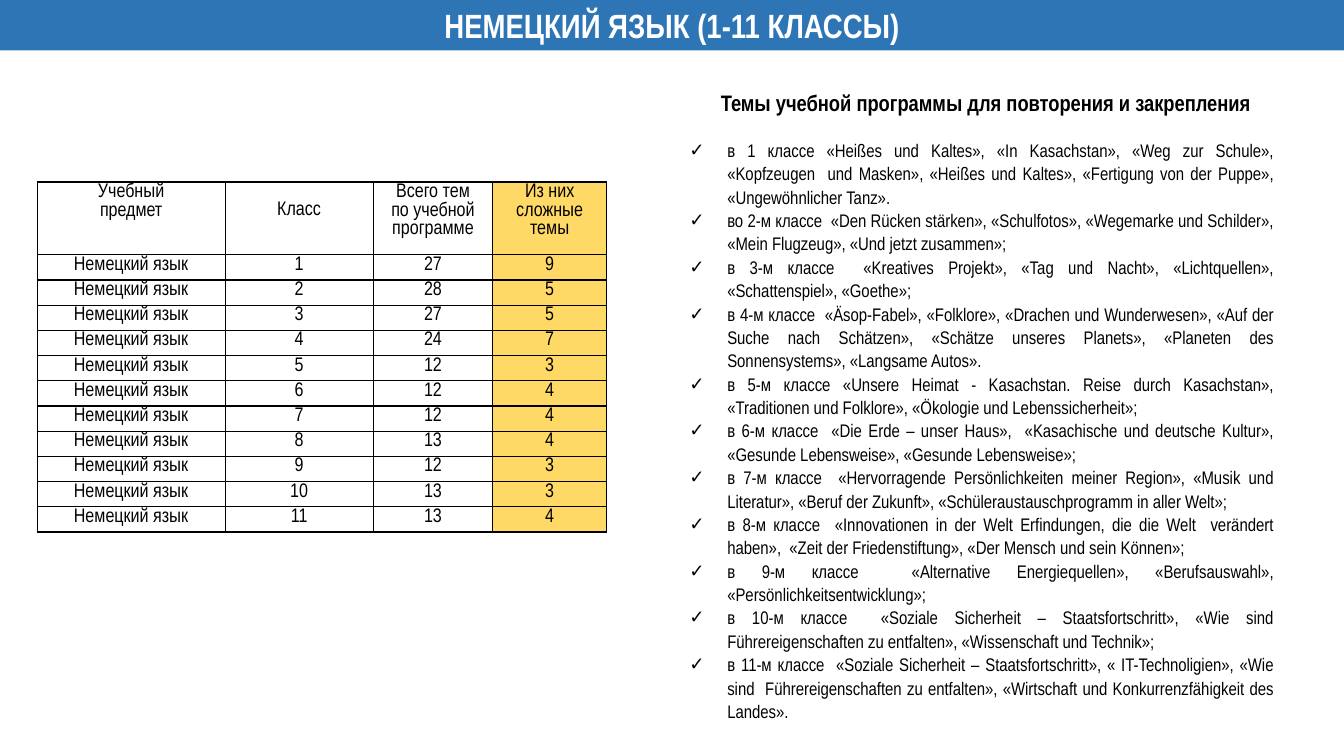
import dataclasses

import lxml.etree
import pptx
import pptx.dml.color
import pptx.enum.text
import pptx.oxml.ns
import pptx.util

Pt = pptx.util.Pt
RGB = pptx.dml.color.RGBColor
Align = pptx.enum.text.PP_ALIGN
Anchor = pptx.enum.text.MSO_ANCHOR
qn = pptx.oxml.ns.qn


@dataclasses.dataclass(frozen=True)
class Theme:
    """Hold the colours, typeface and type sizes of the slide."""
    font: str = "Arial Narrow"
    banner: str = "2E75B6"
    highlight: str = "FFD966"
    ink: str = "000000"
    light: str = "FFFFFF"
    title_size: float = 24
    heading_size: float = 16
    list_size: float = 13
    table_size: float = 14


THEME = Theme()
TITLE = "НЕМЕЦКИЙ ЯЗЫК (1-11 КЛАССЫ)"
HEADING = "Темы учебной программы для повторения и закрепления"
TOPICS = [
    "в 1 классе «Heißes und Kaltes», «In Kasachstan», «Weg zur Schule», «Kopfzeugen  und Masken», «Heißes und Kaltes», «Fertigung von der Puppe», «Ungewöhnlicher Tanz».",
    "во 2-м классе  «Den Rücken stärken», «Schulfotos», «Wegemarke und Schilder», «Mein Flugzeug», «Und jetzt zusammen»;",
    "в 3-м классе  «Kreatives Projekt», «Tag und Nacht», «Lichtquellen», «Schattenspiel», «Goethe»;",
    "в 4-м классе  «Äsop-Fabel», «Folklore», «Drachen und Wunderwesen», «Auf der Suche nach Sсhätzen», «Schätze unseres Planets», «Planeten des Sonnensystems», «Langsame Autos».",
    "в 5-м классе «Unsere Heimat - Kasachstan. Reise durch Kasachstan», «Traditionen und Folklore», «Ökologie und Lebenssicherheit»;",
    "в 6-м классе  «Die Erde – unser Haus»,  «Kasachische und deutsche Kultur», «Gesunde Lebensweise», «Gesunde Lebensweise»;",
    "в 7-м классе  «Hervorragende Persönlichkeiten meiner Region», «Musik und Literatur», «Beruf der Zukunft», «Schüleraustauschprogramm in aller Welt»;",
    "в 8-м классе  «Innovationen in der Welt Erfindungen, die die Welt  verändert haben»,  «Zeit der Friedenstiftung», «Der Mensch und sein Können»;",
    "в 9-м классе  «Alternative Energiequellen», «Berufsauswahl», «Persönlichkeitsentwicklung»;",
    "в 10-м классе  «Soziale Sicherheit – Staatsfortschritt», «Wie sind Führereigenschaften zu entfalten», «Wissenschaft und Technik»;",
    "в 11-м классе  «Soziale Sicherheit – Staatsfortschritt», « IT-Technoligien», «Wie sind  Führereigenschaften zu entfalten», «Wirtschaft und Konkurrenzfähigkeit des Landes».",
]
SUBJECT = "Немецкий язык"
HEADERS = ["Учебный\nпредмет", "Класс", "Всего тем\nпо учебной программе", "Из них\nсложные темы"]
HEADER_TOPS = [1, 14, 1, 1]
TOTALS = [27, 28, 27, 24, 12, 12, 12, 13, 12, 13, 13]
DIFFICULT = [9, 5, 5, 7, 3, 4, 4, 4, 3, 3, 4]


def apply_format(target, values):
    """Set every named attribute of the target."""
    for name, value in values.items():
        setattr(target, name, value)


def place(shape, box):
    """Move a shape to a box of left, top, width and height in points."""
    names = ("left", "top", "width", "height")
    apply_format(shape, {name: Pt(value) for name, value in zip(names, box)})


def write_paragraph(paragraph, text, size, color, bold=False, **layout):
    """Fill a paragraph with one formatted run."""
    run = paragraph.add_run()
    run.text = text
    apply_format(run.font, {"name": THEME.font, "size": Pt(size), "bold": bold})
    run.font.color.rgb = RGB.from_string(color)
    spacing = {"space_before": Pt(0), "space_after": Pt(0), "line_spacing": 1.0}
    apply_format(paragraph, {**spacing, **layout})


def set_bullet(paragraph, margin, indent, mark=None):
    """Set the indents of a paragraph and its bullet mark, if any."""
    properties = paragraph._p.get_or_add_pPr()
    properties.set("marL", str(Pt(margin)))
    properties.set("indent", str(Pt(indent)))
    if mark:
        lxml.etree.SubElement(properties, qn("a:buFont"), typeface="Arial")
        lxml.etree.SubElement(properties, qn("a:buChar"), char=mark)
    else:
        lxml.etree.SubElement(properties, qn("a:buNone"))


def set_borders(cell):
    """Draw a one-point line on the four sides of a cell."""
    properties = cell._tc.get_or_add_tcPr()
    for side in ("a:lnL", "a:lnR", "a:lnT", "a:lnB"):
        line = lxml.etree.SubElement(properties, qn(side), w=str(Pt(1)))
        fill = lxml.etree.SubElement(line, qn("a:solidFill"))
        lxml.etree.SubElement(fill, qn("a:srgbClr"), val=THEME.ink)


def add_banner(slide, box):
    """Turn the title placeholder into the banner."""
    title = slide.shapes.title
    place(title, box)
    title.fill.solid()
    title.fill.fore_color.rgb = RGB.from_string(THEME.banner)
    frame = title.text_frame
    apply_format(frame, {"auto_size": pptx.enum.text.MSO_AUTO_SIZE.NONE,
                         "word_wrap": True, "vertical_anchor": Anchor.MIDDLE})
    write_paragraph(frame.paragraphs[0], TITLE, THEME.title_size, THEME.light,
                    bold=True, alignment=Align.CENTER)


def add_topics(slide, box):
    """Fill the body placeholder with the heading and the topic list."""
    body = slide.placeholders[1]
    place(body, box)
    frame = body.text_frame
    apply_format(frame, {"auto_size": pptx.enum.text.MSO_AUTO_SIZE.NONE,
                         "word_wrap": True, "vertical_anchor": Anchor.TOP})
    heading = frame.paragraphs[0]
    write_paragraph(heading, HEADING, THEME.heading_size, THEME.ink, bold=True,
                    alignment=Align.LEFT, space_after=Pt(15.6))
    set_bullet(heading, 22.5, 0)
    for topic in TOPICS:
        paragraph = frame.add_paragraph()
        write_paragraph(paragraph, topic, THEME.list_size, THEME.ink,
                        alignment=Align.JUSTIFY, line_spacing=1.07)
        set_bullet(paragraph, 27, -27, "✓")


def fill_cell(cell, text, side_margin, top_margin, line_spacing, highlighted):
    """Write and format one table cell."""
    set_borders(cell)
    if highlighted:
        cell.fill.solid()
        cell.fill.fore_color.rgb = RGB.from_string(THEME.highlight)
    else:
        cell.fill.background()
    apply_format(cell, {"margin_left": Pt(side_margin), "margin_right": Pt(side_margin),
                        "margin_top": Pt(top_margin), "margin_bottom": 0,
                        "vertical_anchor": Anchor.TOP})
    frame = cell.text_frame
    for index, line in enumerate(text.split("\n")):
        paragraph = frame.add_paragraph() if index else frame.paragraphs[0]
        write_paragraph(paragraph, line, THEME.table_size, THEME.ink,
                        alignment=Align.CENTER, line_spacing=line_spacing)


def add_topic_table(slide, box):
    """Add the table of topic counts by class."""
    grades = enumerate(zip(TOTALS, DIFFICULT), start=1)
    rows = [HEADERS] + [[SUBJECT, str(grade), str(total), str(hard)]
                        for grade, (total, hard) in grades]
    left, top, width, height = box
    table = slide.shapes.add_table(len(rows), len(HEADERS), Pt(left), Pt(top),
                                   Pt(width), Pt(height)).table
    apply_format(table, {"first_row": False, "horz_banding": False})
    for column, share in zip(table.columns, (0.33, 0.26, 0.21, 0.2)):
        column.width = Pt(width * share)
    row_height = 18
    for index, (row, texts) in enumerate(zip(table.rows, rows)):
        is_header = index == 0
        row.height = Pt(height - row_height * len(TOTALS) if is_header else row_height)
        for column, text in enumerate(texts):
            fill_cell(row.cells[column], text, 3 if is_header else 5,
                      HEADER_TOPS[column] if is_header else 0,
                      1.0 if is_header else 1.07, column == len(HEADERS) - 1)


def main():
    """Build and save the presentation."""
    presentation = pptx.Presentation()
    apply_format(presentation, {"slide_width": Pt(960), "slide_height": Pt(540)})
    slide = presentation.slides.add_slide(presentation.slide_layouts[1])
    add_banner(slide, (0, 0, 960, 36))
    add_topics(slide, (485.3, 60, 431.3, 460))
    add_topic_table(slide, (26.6, 130, 406.8, 250))
    presentation.save("out.pptx")


if __name__ == "__main__":
    main()
